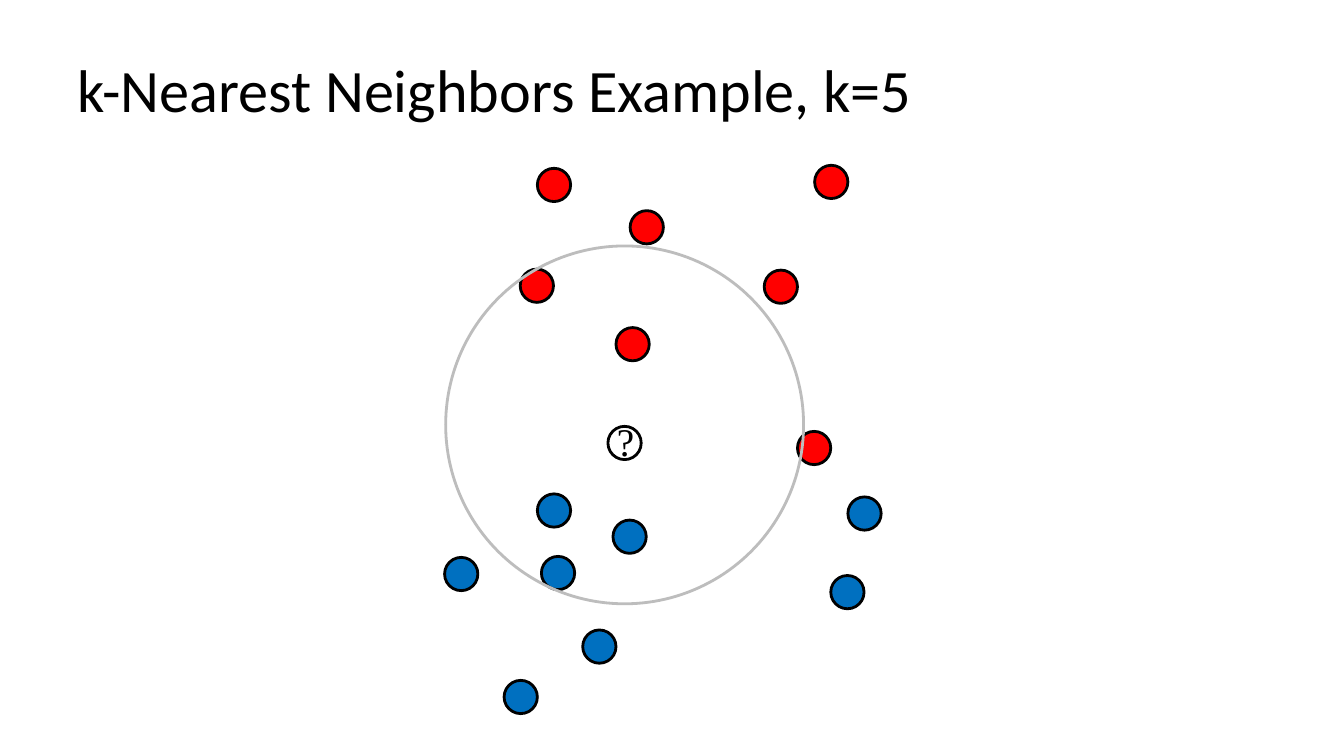
from pptx import Presentation
from pptx import util as u
from pptx.dml.color import RGBColor
from pptx.enum import shapes, text

PX = 9144  # EMU per px, 100 px to the inch
BLACK, RED, BLUE, GREY = "000000", "FF0000", "0070C0", "BDBDBD"
DOT = 33

# Left and top of each dot, relative to the plot box
RED_DOTS = [(75, 103), (184, 45), (317, 104), (170, 161),
            (350, 264), (367, 0), (92, 3)]
BLUE_DOTS = [(0, 389), (137, 461), (383, 407), (92, 326),
             (167, 352), (400, 329), (96, 388), (59, 511)]


def px(*sizes):
    return [u.Emu(size * PX) for size in sizes]


def color(code):
    return RGBColor.from_string(code)


def write(slide, words, box, font="Calibri", size=18, ink=BLACK,
          wrap=True, anchor=text.MSO_ANCHOR.TOP):
    frame = slide.shapes.add_textbox(*px(*box)).text_frame
    frame.word_wrap = wrap
    frame.vertical_anchor = anchor
    line = frame.paragraphs[0]
    line.text = words
    line.font.name = font
    line.font.size = u.Pt(size)
    line.font.color.rgb = color(ink)


def ring(slide, left, top, width, fill=None, line=BLACK):
    """Draw a circle, hollow unless a fill is given."""
    shape = slide.shapes.add_shape(shapes.MSO_SHAPE.OVAL,
                                   *px(left, top, width, width))
    shape.shadow.inherit = False
    if fill:
        shape.fill.solid()
        shape.fill.fore_color.rgb = color(fill)
    else:
        shape.fill.background()
    shape.line.color.rgb = color(line)
    shape.line.width = u.Pt(2)


def title(slide, box):
    write(slide, "k-Nearest Neighbors Example, k=5", box, size=43,
          anchor=text.MSO_ANCHOR.MIDDLE)


def plot(slide, left, top):
    for fill, dots in ((RED, RED_DOTS), (BLUE, BLUE_DOTS)):
        for x, y in dots:
            ring(slide, left + x, top + y, DOT, fill=fill)
    ring(slide, left + 1, top + 80, 355, line=GREY)
    ring(slide, left + 162, top + 259, DOT)
    write(slide, "?", (left + 161, top + 245, 38, 57),
          font="Times New Roman", size=28, wrap=False)


def main():
    deck = Presentation()
    deck.slide_width, deck.slide_height = px(1333, 750)
    slide = deck.slides.add_slide(deck.slide_layouts[6])
    title(slide, (67, 25, 1242, 125))
    plot(slide, 441, 164)
    deck.save("out.pptx")


if __name__ == "__main__":
    main()
